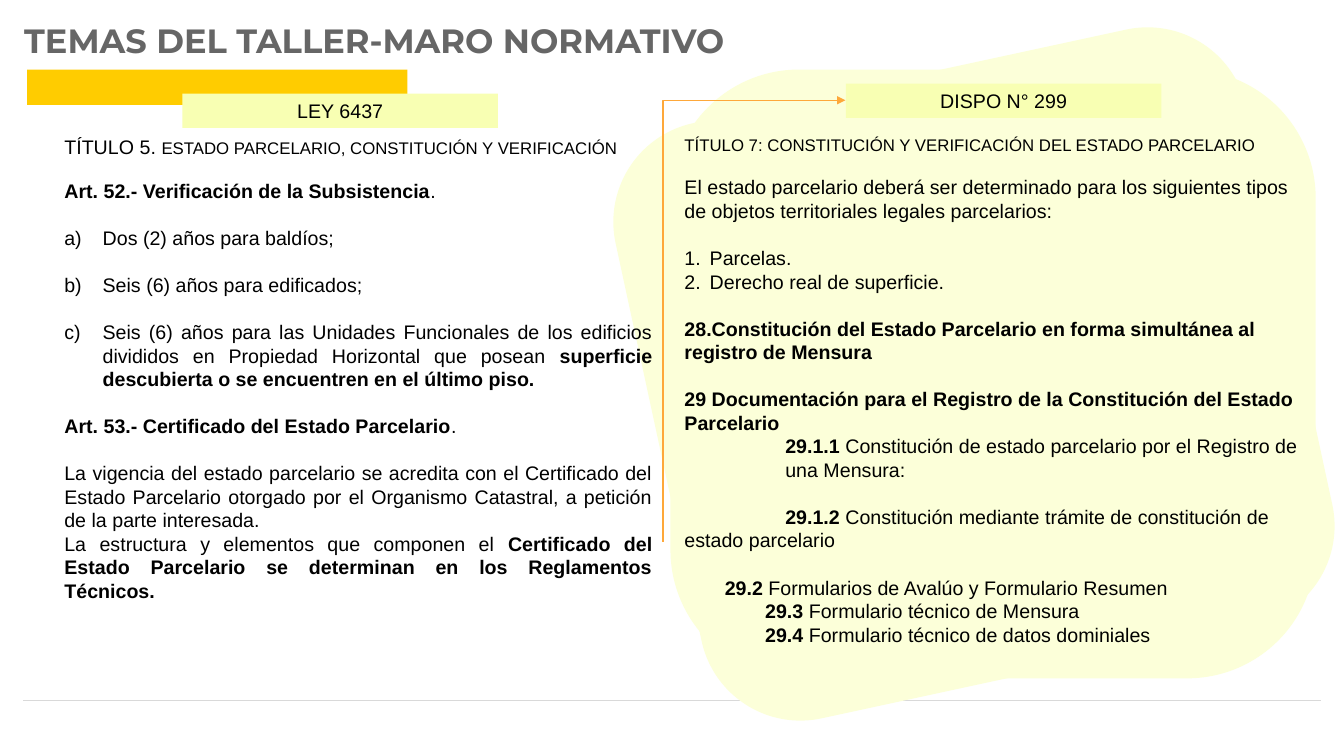
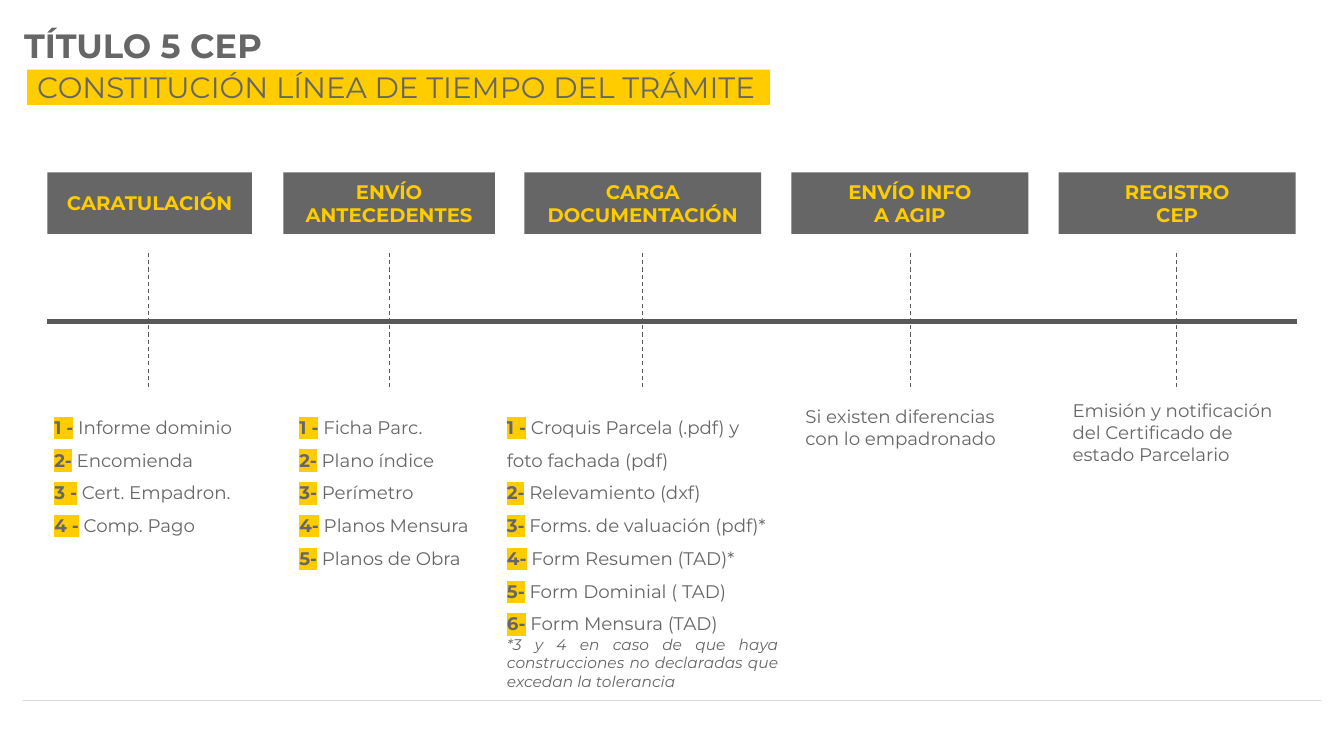
from lxml.etree import SubElement
from pptx import Presentation
from pptx.dml.color import RGBColor
from pptx.enum.dml import MSO_LINE
from pptx.enum.shapes import MSO_CONNECTOR, MSO_SHAPE
from pptx.enum.text import MSO_ANCHOR, PP_ALIGN
from pptx.oxml import parse_xml
from pptx.oxml.ns import nsdecls, qn
from pptx.util import Inches, Pt

GOLD, GRAY, AXIS, RULE = "FFCC00", "666666", "595959", "D9D9D9"
CREAM, LEMON, ORANGE, BLACK = "FCFFD9", "F8FFB3", "FEA83A", "000000"
HEAD_FONT, LAW_FONT = "Montserrat", "Arial"
rgb = RGBColor.from_string


def add_block(slide, at, paragraphs=(), size=14, font=HEAD_FONT, color=GRAY, bold=None,
              fill=None, outline=MSO_SHAPE.RECTANGLE, align=PP_ALIGN.LEFT,
              inset=(0.1, 0.05), spacing=None, highlight=None):
    """Add a text box, or a filled shape; text between bars is bold."""
    box = [Inches(length) for length in at]
    if fill:
        block = slide.shapes.add_shape(outline, *box)
        block.shadow.inherit = False
        block.fill.solid()
        block.fill.fore_color.rgb = rgb(fill)
        block.line.fill.background()
    else:
        block = slide.shapes.add_textbox(*box)
    frame = block.text_frame
    frame.word_wrap = True
    frame.vertical_anchor = MSO_ANCHOR.MIDDLE if fill else MSO_ANCHOR.TOP
    frame.margin_left = frame.margin_right = Inches(inset[0])
    frame.margin_top = frame.margin_bottom = Inches(inset[1])
    for number, text in enumerate(paragraphs):
        paragraph = frame.add_paragraph() if number else frame.paragraphs[0]
        paragraph.alignment = align
        paragraph.line_spacing = spacing
        paragraph.font.name, paragraph.font.size = font, Pt(size)
        paragraph.font.bold = bold
        paragraph.font.color.rgb = rgb(color)
        for part, words in enumerate(text.split("|")):
            if not words:
                continue
            run = paragraph.add_run()
            run.text = words
            if part % 2:
                run.font.bold = True
                if highlight:
                    mark = SubElement(run.font._element, qn("a:highlight"))
                    SubElement(mark, qn("a:srgbClr"), val=highlight)
    return block


def add_line(slide, start, end, color, width=0.75, kind=MSO_CONNECTOR.STRAIGHT):
    ends = [Inches(length) for length in (*start, *end)]
    line = slide.shapes.add_connector(kind, *ends)
    line.line.color.rgb = rgb(color)
    line.line.width = Pt(width)
    SubElement(line.element.spPr, qn("a:effectLst"))
    return line


prs = Presentation()
prs.slide_width, prs.slide_height = Inches(13.33), Inches(7.5)

# Shared frame: footer rule, title and gold band
headings = [
    ("TEMAS DEL TALLER-MARO NORMATIVO", 0.13, 3.77, []),
    ("TÍTULO 5 CEP", 0.18, 7.37, ["CONSTITUCIÓN LÍNEA DE TIEMPO DEL TRÁMITE"]),
]
for title, title_top, band_width, subtitle in headings:
    slide = prs.slides.add_slide(prs.slide_layouts[6])
    add_line(slide, (0.23, 6.95), (13.1, 6.95), RULE)
    add_block(slide, (0.17, title_top, 12.8, 0.5), [title], 24, bold=True, inset=(0.07, 0.07))
    add_block(slide, (0.27, 0.69, band_width, 0.35), subtitle, 21, fill=GOLD, inset=(0.1, 0.1))
regulations, timeline = prs.slides

# Slide 1: cream backdrop
for left, corner, turn in [(6.46, 0.166, 347.8), (6.65, 0.211, 0)]:
    backdrop = add_block(regulations, (left, 0.69, 6.4, 6.04), fill=CREAM,
                         outline=MSO_SHAPE.ROUNDED_RECTANGLE)
    backdrop.adjustments[0] = corner
    backdrop.rotation = turn

# Law names
for law, left, top in [("LEY 6437", 1.81, 0.93), ("DISPO N° 299", 8.39, 0.83)]:
    add_block(regulations, (left, top, 3.13, 0.34), [law], font=LAW_FONT, color=BLACK,
              fill=LEMON, align=PP_ALIGN.CENTER)

# Law texts; each row: text, blank lines before, left margin, first-line indent, numbering
LETTERS, NUMBERS = "alphaLcParenR", "arabicPeriod"
law_rows = [
    ("TÍTULO 5. |ESTADO PARCELARIO, CONSTITUCIÓN Y VERIFICACIÓN|", 0, 0, 0, None),
    ("|Art. 52.- Verificación de la Subsistencia|.", 0.86, 0, 0, None),
    ("Dos (2) años para baldíos;", 1, 0.38, -0.38, LETTERS),
    ("Seis (6) años para edificados;", 1, 0.38, -0.38, LETTERS),
    ("Seis (6) años para las Unidades Funcionales de los edificios divididos en Propiedad "
     "Horizontal que posean |superficie descubierta o se encuentren en el último piso.|",
     1, 0.38, -0.38, LETTERS),
    ("|Art. 53.- Certificado del Estado Parcelario|.", 1, 0, 0, None),
    ("La vigencia del estado parcelario se acredita con el Certificado del Estado Parcelario "
     "otorgado por el Organismo Catastral, a petición de la parte interesada.", 1, 0, 0, None),
    ("La estructura y elementos que componen el |Certificado del Estado Parcelario se "
     "determinan en los Reglamentos Técnicos.|", 0, 0, 0, None),
]
provision_rows = [
    ("TÍTULO 7: CONSTITUCIÓN Y VERIFICACIÓN DEL ESTADO PARCELARIO", 0, 0, 0, None),
    ("El estado parcelario deberá ser determinado para los siguientes tipos de objetos "
     "territoriales legales parcelarios:", 0.86, 0, 0, None),
    ("Parcelas.", 1, 0.25, -0.25, NUMBERS),
    ("Derecho real de superficie.", 0, 0.25, -0.25, NUMBERS),
    ("|28.Constitución del Estado Parcelario en forma simultánea al registro de Mensura|",
     1, 0, 0, None),
    ("|29 Documentación para el Registro de la Constitución del Estado Parcelario|",
     1, 0, 0, None),
    ("|29.1.1| Constitución de estado parcelario por el Registro de una Mensura:",
     0, 1, 0, None),
    ("|29.1.2| Constitución mediante trámite de constitución de estado parcelario",
     1, 0, 1, None),
    ("|29.2| Formularios de Avalúo y Formulario Resumen", 1, 0.4, 0, None),
    ("|29.3| Formulario técnico de Mensura", 0, 0.8, 0, None),
    ("|29.4| Formulario técnico de datos dominiales", 0, 0.8, 0, None),
]
LINE_PITCH = 16.8
law_columns = [
    ((0.54, 1.29, 6.03, 4.78), law_rows, PP_ALIGN.JUSTIFY),
    ((6.69, 1.29, 6.29, 5.42), provision_rows, PP_ALIGN.LEFT),
]
for at, rows, align in law_columns:
    column = add_block(regulations, at, [row[0] for row in rows], font=LAW_FONT,
                       color=BLACK, align=align, spacing=Pt(LINE_PITCH))
    paragraphs = column.text_frame.paragraphs
    for paragraph, (_, gap, margin, indent, numbering) in zip(paragraphs, rows):
        properties = paragraph._p.get_or_add_pPr()
        properties.set("marL", str(Inches(margin)))
        properties.set("indent", str(Inches(indent)))
        if numbering:
            properties.find(qn("a:defRPr")).addprevious(
                parse_xml(f'<a:buAutoNum {nsdecls("a")} type="{numbering}"/>'))
        if gap:
            paragraph.space_before = Pt(gap * LINE_PITCH)
    # The heading is set smaller than the body
    heading = paragraphs[0]
    heading.alignment = PP_ALIGN.LEFT
    if len(heading.runs) > 1:
        heading.runs[1].font.size = Pt(12)
        heading.runs[1].font.bold = False
    else:
        heading.font.size = Pt(12)
        heading.line_spacing = Pt(14.4)

# Elbow arrow from the law to the provision
elbow = add_line(regulations, (9.67, 4.09), (5.29, 2.28), ORANGE, kind=MSO_CONNECTOR.ELBOW)
elbow.element.spPr.find(qn("a:xfrm")).set("rot", str(90 * 60000))
elbow.element.spPr.find(qn("a:prstGeom")).set("prst", "bentConnector2")
SubElement(elbow.line._get_or_add_ln(), qn("a:tailEnd"), type="triangle")

# Slide 2: stages along the time axis
add_line(timeline, (0.47, 3.19), (12.86, 3.19), AXIS, 3)
stages = [
    (["CARATULACIÓN"], 0.47, 2.03, 1.47),
    (["ENVÍO ANTECEDENTES"], 2.81, 2.1, 3.86),
    (["CARGA DOCUMENTACIÓN"], 5.2, 2.35, 6.37),
    (["ENVÍO INFO", "A AGIP"], 7.85, 2.35, 9.03),
    (["REGISTRO", "CEP"], 10.5, 2.35, 11.67),
]
for name, left, width, moment in stages:
    tick = add_line(timeline, (moment, 2.51), (moment, 3.84), AXIS)
    tick.line.dash_style = MSO_LINE.DASH
    add_block(timeline, (left, 1.71, width, 0.61), name, color=GOLD, bold=True, fill=GRAY,
              align=PP_ALIGN.CENTER, inset=(0.07, 0.07))

# Documents and notes under each stage
FOOTNOTE = "*3 y 4 en caso de que haya construcciones no declaradas que excedan la tolerancia"
details = [
    ((0.44, 3.92, 3.04, 1.41), 1.5,
     ["|1 -| Informe dominio", "|2-| Encomienda", "|3 -| Cert. Empadron.", "|4 -| Comp. Pago"]),
    ((2.87, 3.92, 1.98, 1.73), 1.5,
     ["|1 -| Ficha Parc.", "|2-| Plano índice", "|3-| Perímetro", "|4-| Planos Mensura",
      "|5-| Planos de Obra"]),
    ((4.93, 3.92, 2.89, 3.06), 1.5,
     ["|1 -| Croquis Parcela (.pdf) y foto fachada (pdf)", "|2-| Relevamiento (dxf)",
      "|3-| Forms. de valuación (pdf)*", "|4-| Form Resumen (TAD)*",
      "|5-| Form Dominial ( TAD)", "|6-| Form Mensura (TAD)", FOOTNOTE]),
    ((7.89, 3.92, 2.27, 0.64), None, ["Si existen diferencias con lo empadronado"]),
    ((10.54, 3.86, 2.27, 0.86), None,
     ["Emisión y notificación del Certificado de estado Parcelario"]),
]
for at, spacing, items in details:
    detail = add_block(timeline, at, items, 13, inset=(0.1, 0.1), spacing=spacing,
                       highlight=GOLD)
    if items[-1] == FOOTNOTE:
        footnote = detail.text_frame.paragraphs[-1]
        footnote.alignment = PP_ALIGN.JUSTIFY
        footnote.line_spacing = None
        footnote.font.size, footnote.font.italic = Pt(11), True

prs.save("out.pptx")
